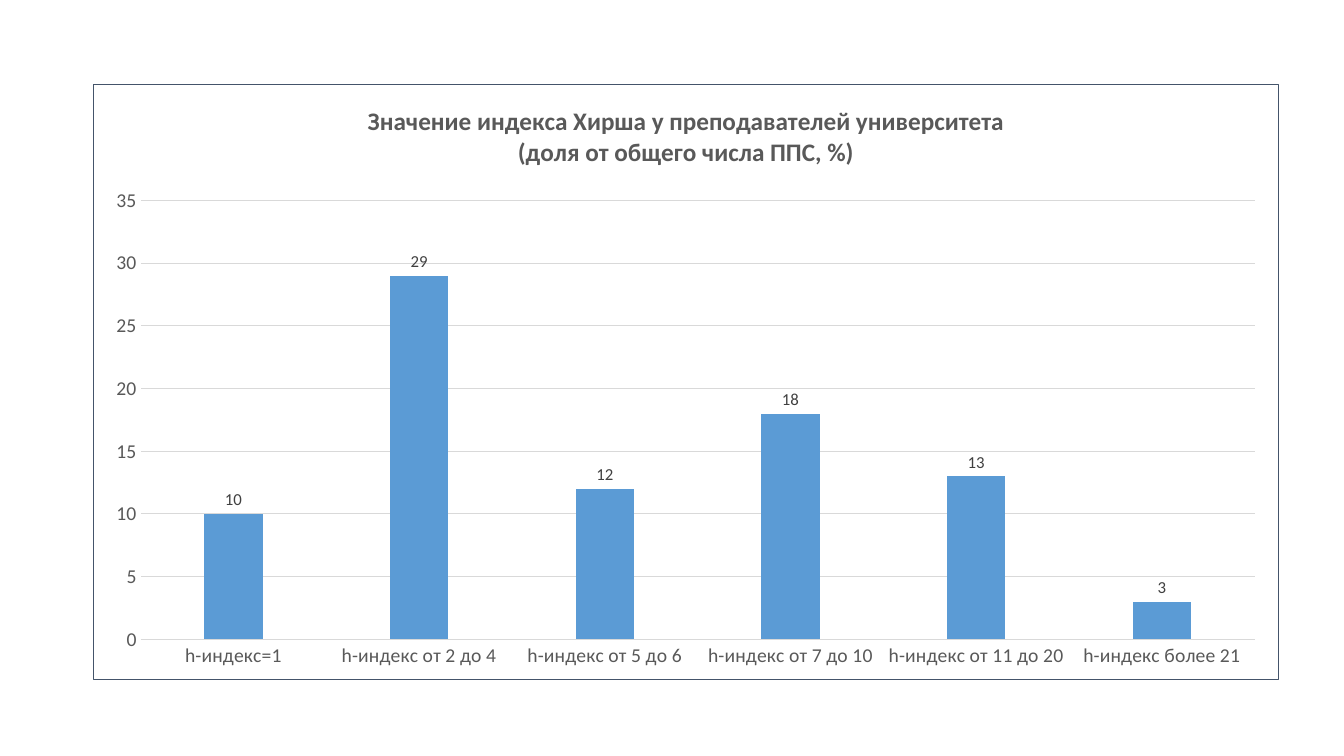
"""Build a slide with a column chart of h-index shares among university staff."""
from dataclasses import dataclass

import pptx
import pptx.chart.data
import pptx.dml.color
import pptx.enum.chart
import pptx.oxml
import pptx.util

Pt = pptx.util.Pt
NAMESPACES = (
    'xmlns:c="http://schemas.openxmlformats.org/drawingml/2006/chart" '
    'xmlns:a="http://schemas.openxmlformats.org/drawingml/2006/main"'
)


@dataclass(frozen=True)
class Theme:
    font: str = "Calibri"
    text: str = "595959"
    label: str = "404040"
    grid: str = "D9D9D9"
    column: str = "5B9BD5"
    border: str = "44546A"
    title_size: float = 18
    axis_size: float = 14
    label_size: float = 12
    line_width: float = 0.75


def rgb(color):
    return pptx.dml.color.RGBColor.from_string(color)


def style_font(font, name, size, color, bold=False):
    font.name = name
    font.size = Pt(size)
    font.bold = bold
    font.color.rgb = rgb(color)


def write_text(frame, text, **style):
    for index, line in enumerate(text.split("\n")):
        paragraph = frame.add_paragraph() if index else frame.paragraphs[0]
        run = paragraph.add_run()
        run.text = line
        style_font(run.font, **style)


class ChartSlide:
    def __init__(self, presentation, theme):
        self.theme = theme
        self.slide = presentation.slides.add_slide(presentation.slide_layouts[6])

    def column_chart(self, box, name, shares):
        data = pptx.chart.data.CategoryChartData()
        data.categories = list(shares)
        data.add_series(name, list(shares.values()))
        kind = pptx.enum.chart.XL_CHART_TYPE.COLUMN_CLUSTERED
        chart = self.slide.shapes.add_chart(kind, *map(Pt, box), data).chart
        chart.has_legend = False
        style_font(chart.font, self.theme.font, 10, "000000")
        columns = chart.plots[0]
        columns.vary_by_categories = False
        columns.gap_width, columns.overlap = 219, -27
        fill = columns.series[0].format.fill
        fill.solid()
        fill.fore_color.rgb = rgb(self.theme.column)
        return chart

    def title(self, chart, text):
        theme = self.theme
        write_text(chart.chart_title.text_frame, text, name=theme.font,
                   size=theme.title_size, color=theme.text, bold=True)
        chart.chart_title.include_in_layout = False

    def line(self, target):
        target.color.rgb = rgb(self.theme.grid)
        target.width = Pt(self.theme.line_width)

    def axes(self, chart, maximum, step):
        theme = self.theme
        shares_axis, groups_axis = chart.value_axis, chart.category_axis
        for axis in (shares_axis, groups_axis):
            axis.major_tick_mark = pptx.enum.chart.XL_TICK_MARK.NONE
            axis.minor_tick_mark = pptx.enum.chart.XL_TICK_MARK.NONE
            style_font(axis.tick_labels.font, theme.font, theme.axis_size, theme.text)
        shares_axis.minimum_scale, shares_axis.maximum_scale = 0, maximum
        shares_axis.major_unit = step
        shares_axis.format.line.fill.background()
        self.line(shares_axis.major_gridlines.format.line)
        self.line(groups_axis.format.line)

    def labels(self, chart):
        theme = self.theme
        labels = chart.plots[0].series[0].data_labels
        labels.show_value = True
        labels.position = pptx.enum.chart.XL_LABEL_POSITION.OUTSIDE_END
        style_font(labels.font, theme.font, theme.label_size, theme.label)

    def plot_area(self, chart, **fractions):
        modes = "".join(f'<c:{side}Mode val="edge"/>' for side in "xy")
        sizes = "".join(f'<c:{key} val="{value}"/>' for key, value in fractions.items())
        area = chart.plots[0]._element.getparent()
        for layout in area.findall(pptx.oxml.ns.qn("c:layout")):
            area.remove(layout)
        area.insert(0, pptx.oxml.parse_xml(
            f'<c:layout {NAMESPACES}><c:manualLayout><c:layoutTarget val="inner"/>'
            f'{modes}{sizes}</c:manualLayout></c:layout>'))

    def frame(self, chart):
        theme = self.theme
        chart._chartSpace.chart.addnext(pptx.oxml.parse_xml(
            f'<c:spPr {NAMESPACES}><a:noFill/><a:ln w="{Pt(theme.line_width)}"><a:solidFill>'
            f'<a:srgbClr val="{theme.border}"/></a:solidFill></a:ln></c:spPr>'))


def main():
    presentation = pptx.Presentation()
    presentation.slide_width, presentation.slide_height = Pt(960), Pt(540)
    page = ChartSlide(presentation, Theme())
    shares = {
        "h-индекс=1": 10,
        "h-индекс от 2 до 4": 29,
        "h-индекс от 5 до 6": 12,
        "h-индекс от 7 до 10": 18,
        "h-индекс от 11 до 20": 13,
        "h-индекс более 21": 3,
    }
    hirsch = page.column_chart((66.2, 59.8, 847.4, 426.2), "Доля ППС, %", shares)
    page.title(hirsch, "Значение индекса Хирша у преподавателей университета\n"
                       "(доля от общего числа ППС, %)")
    page.axes(hirsch, maximum=35, step=5)
    page.labels(hirsch)
    page.plot_area(hirsch, x=0.04, y=0.195, w=0.94, h=0.737)
    page.frame(hirsch)
    presentation.save("out.pptx")


if __name__ == "__main__":
    main()
